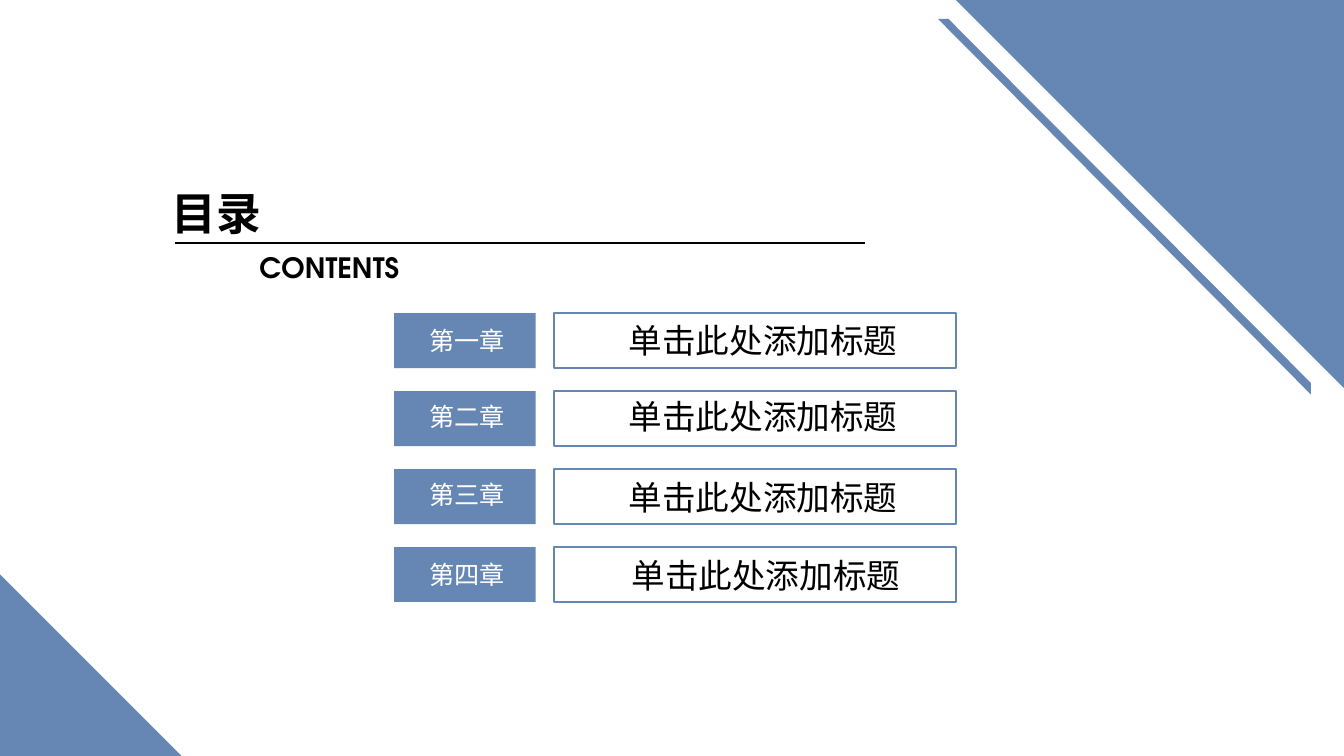
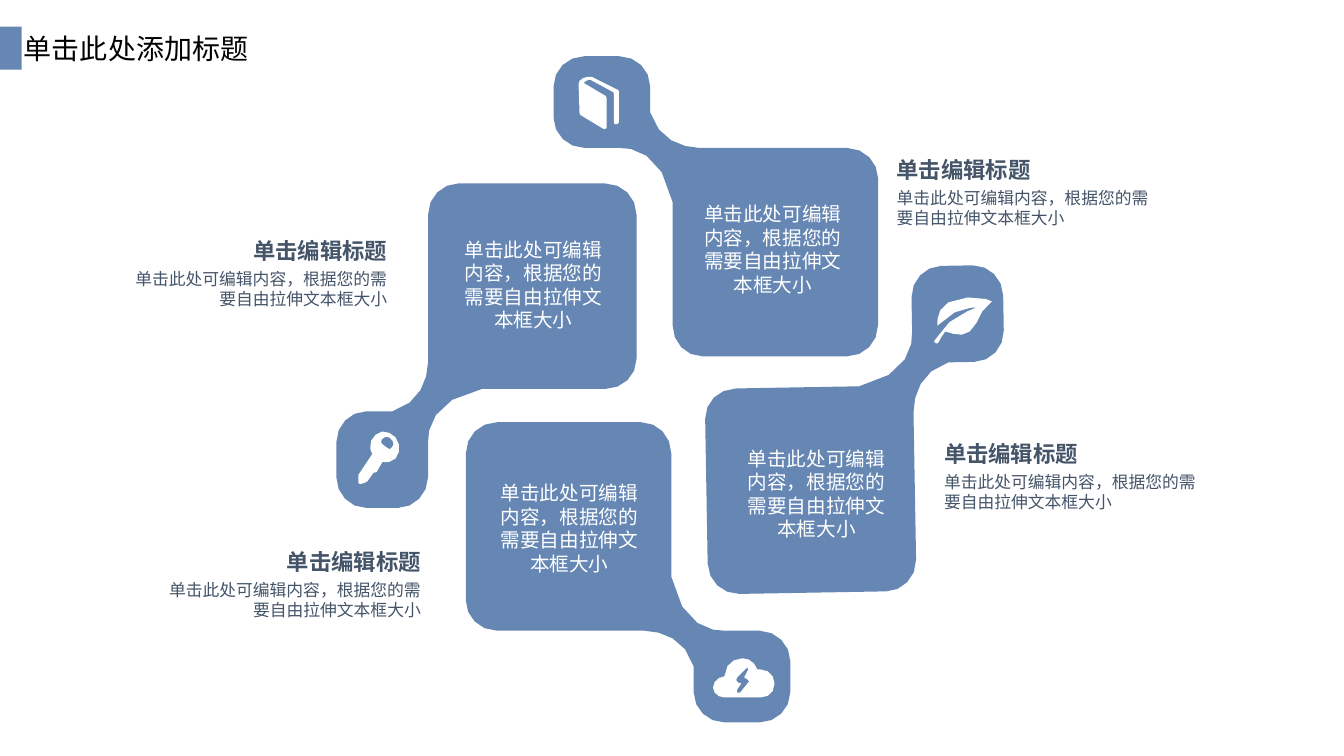
from lxml import etree
from pptx import Presentation
from pptx.dml.color import RGBColor
from pptx.enum.shapes import MSO_CONNECTOR, MSO_SHAPE
from pptx.enum.text import PP_ALIGN
from pptx.oxml.ns import qn
from pptx.util import Pt

RECT = MSO_SHAPE.RECTANGLE
WEDGE = MSO_SHAPE.RIGHT_TRIANGLE
STRAIGHT = MSO_CONNECTOR.STRAIGHT
LEFT, MID, RIGHT = PP_ALIGN.LEFT, PP_ALIGN.CENTER, PP_ALIGN.RIGHT

BLUE, SLATE, WHITE, BLACK = "6687B3", "445469", "FFFFFF", "000000"
HAN, LATIN, SANS = "Noto Sans CJK SC", "TeX Gyre Adventor", "Arial"

TITLE = "单击此处添加标题"
HEAD = "单击编辑标题"
BODY = "单击此处可编辑内容，根据您的需要自由拉伸文本框大小"

STRIPE = [[(670, 13.5), (677.5, 13.5), (936.4, 273.6), (936.4, 281.8)]]

PETAL_W, PETAL_H = 231.8, 214.4
PETAL = [[
    (22, 65.5), (47, 65.5), (55, 65, 78, 68, 85, 104),
    (85, 192), (85, 204.5, 94.5, 214.4, 106.5, 214.4),
    (209.5, 214.4), (222, 214.4, 231.8, 204.5, 231.8, 192),
    (231.8, 87), (231.8, 76, 222.5, 65.5, 209.5, 65.5),
    (104, 65.5), (91.5, 65, 75, 60, 69, 40),
    (69, 21.5), (69, 9.5, 59, 0, 47, 0),
    (22, 0), (10, 0, 0, 9.5, 0, 21.5),
    (0, 44), (0, 55.5, 10, 65.5, 22, 65.5),
]]
BOOK = [[
    (28, 10), (9.4, 0.7), (7.2, 0, 2.2, 1.4, 0.7, 3.6), (0, 5.8),
    (0.7, 26.6), (1.4, 28), (18, 38), (20, 37.5), (20, 15.8),
    (19.4, 14.4), (3.6, 5), (5, 3.5, 7.2, 2.5, 8.6, 2.9),
    (24.5, 11.5), (25.2, 12.2), (25.2, 33),
    (25.2, 34, 26, 34.6, 26.6, 34.6), (27.4, 34.6, 28.8, 34, 28.8, 33),
    (28.8, 10.8),
]]
KEY = [
    [(29, 9.5), (28, 3, 22, 0, 17, 0), (11.5, 1.5, 8, 6, 8.5, 11.5),
     (8.5, 12.5, 9, 14.5, 10, 16), (0, 31), (0, 36),
     (0, 37, 0.5, 37.5, 1.5, 37.5), (4.5, 36.7), (6.5, 35.5),
     (10.8, 29.5), (13, 29), (17.3, 21.6),
     (18.7, 22.3, 21.6, 21.6, 22.3, 21.6),
     (27.4, 21, 30.2, 14.4, 29, 9.5)],
    [(23.8, 11.5), (22.3, 13.7, 21.6, 12.2, 19.4, 10.8),
     (18, 9.4, 15, 8.6, 16.6, 5.8), (18, 3.6, 21.6, 2.9, 23, 5),
     (25.2, 6.5, 26, 10, 23.8, 11.5)],
]
CLOUD = [
    [(31.7, 8), (30, 3, 26, 0, 21, 0), (14.4, 0, 8.6, 5, 8.6, 11.5),
     (8, 13), (4.3, 13, 0, 16.6, 0, 21), (0, 25, 4.3, 28, 8, 28),
     (34, 28), (39.6, 28, 44, 24.5, 44, 18),
     (44, 12.2, 39.6, 8, 34, 8)],
    [(25.2, 17.3), (19.4, 24.5), (17.3, 24.5), (17.3, 22.3),
     (20.2, 18), (18, 17.3), (16.6, 15.8), (17.3, 13.7),
     (23, 8), (24.5, 6.5), (25.2, 8), (22.3, 13.7),
     (24.5, 15), (26, 16.6)],
]
LEAF = [[
    (10.8, 7.2), (2.2, 12.2, 2.9, 20.2, 2.9, 23.8),
    (14.4, 10, 31, 10.8, 31, 10.8), (31, 10.8, 7.2, 18.7, 0.7, 34.6),
    (0, 36, 2.9, 37.4, 3.6, 36), (5, 32.4, 8.6, 28, 8.6, 28),
    (13.7, 29.5, 20.9, 32.4, 26, 28), (32.4, 23.8, 32.4, 12.2, 41.8, 6.5),
    (44.6, 5.8, 22.3, 0, 10.8, 7.2),
]]

ROWS = [
    ("第一章", 229, 442, 225),
    ("第二章", 283, 442, 279.4),
    ("第三章", 339, 442, 337),
    ("第四章", 396, 444, 393),
]
PETALS = [
    ((347.5, 246.9), 270, KEY, (256, 308.2), (326, 169.7), (92.6, 169.7), RIGHT),
    ((448.6, 408.8), 180, CLOUD, (509.3, 470.2), (351.7, 343.6), (116.7, 391.7), RIGHT),
    ((511.3, 147.4), 0, BOOK, (413.3, 54.2), (497, 144.5), (640.5, 111.6), LEFT),
    ((611, 306.9), 89, LEAF, (666.7, 208.8), (528.2, 319), (674.3, 314.6), LEFT),
]


def tint(code):
    return RGBColor.from_string(code)


def trace(path, steps):
    dots = [path[0]]
    for part in path[1:]:
        if len(part) == 2:
            dots.append(part)
            continue
        a, b, c, d = dots[-1], part[:2], part[2:4], part[4:]
        for i in range(1, steps + 1):
            t = i / steps
            u = 1 - t
            dots.append(tuple(
                u**3 * p + 3 * u * u * t * q + 3 * u * t * t * r + t**3 * s
                for p, q, r, s in zip(a, b, c, d)))
    return dots


class Deck:
    def __init__(self):
        self.file = Presentation()
        self.file.slide_width, self.file.slide_height = Pt(960), Pt(540)

    def page(self):
        slide = self.file.slides.add_slide(self.file.slide_layouts[6])
        self.shapes = slide.shapes

    def paint(self, shape, fill, edge=None, turn=0):
        shape.shadow.inherit = False
        shape.rotation = turn
        if fill:
            shape.fill.solid()
            shape.fill.fore_color.rgb = tint(fill)
        else:
            shape.fill.background()
        if edge:
            shape.line.color.rgb = tint(edge)
            shape.line.width = Pt(1.5)
        else:
            shape.line.fill.background()

    def block(self, kind, x, y, w, h, fill=BLUE, edge=None, turn=0):
        shape = self.shapes.add_shape(kind, Pt(x), Pt(y), Pt(w), Pt(h))
        self.paint(shape, fill, edge, turn)

    def draw(self, paths, x=0, y=0, fill=BLUE, turn=0, steps=3):
        pen = None
        for path in paths:
            dots = [(Pt(x + a), Pt(y + b)) for a, b in trace(path, steps)]
            if pen is None:
                pen = self.shapes.build_freeform(*dots[0], scale=1.0)
            else:
                pen.move_to(*dots[0])
            pen.add_line_segments(dots[1:], close=True)
        self.paint(pen.convert_to_shape(), fill, turn=turn)

    def rule(self, x, y, end):
        line = self.shapes.add_connector(STRAIGHT, Pt(x), Pt(y), Pt(end), Pt(y))
        line.line.color.rgb = tint(BLACK)
        line.line.width = Pt(1.5)
        etree.SubElement(line._element.spPr, qn("a:effectLst"))

    def text(self, words, x, y, w, h, size, color=BLACK, font=HAN,
             bold=False, align=LEFT, pad=True):
        box = self.shapes.add_textbox(Pt(x), Pt(y), Pt(w), Pt(h))
        frame = box.text_frame
        frame.word_wrap = True
        if not pad:
            frame.margin_left = frame.margin_right = Pt(0)
            frame.margin_top = frame.margin_bottom = Pt(0)
        frame.text = words
        para = frame.paragraphs[0]
        para.alignment = align
        run = para.runs[0]
        run.font.size = Pt(size)
        run.font.bold = bold
        run.font.color.rgb = tint(color)
        run.font.name = font
        east = etree.SubElement(run._r.get_or_add_rPr(), qn("a:ea"))
        east.set("typeface", font)

    def note(self, words, x, y, w, h, size, color, align, bold=False):
        self.text(words, x, y, w, h, size, color, SANS, bold, align, False)


def contents(deck):
    deck.page()
    deck.block(WEDGE, 682.8, 0, 277.2, 277.2, turn=180)
    deck.draw(STRIPE)
    deck.block(WEDGE, 0, 410.2, 129.8, 129.8)
    deck.text("目录", 115.5, 129, 92, 46, 32, bold=True)
    deck.rule(125, 173.5, 618)
    deck.text("CONTENTS", 178.3, 175.4, 116, 32, 20, font=LATIN, bold=True)
    for i, (name, low, x, y) in enumerate(ROWS):
        top = 223.7 + 55.7 * i
        deck.block(RECT, 281.5, top, 101.2, 39.2)
        deck.block(RECT, 396, top, 287, 39.2, None, BLUE)
        deck.text(name, 299.5, low, 72, 29, 18, WHITE)
        deck.text(TITLE, x, y, 211, 36, 24)


def petals(deck):
    deck.page()
    deck.block(RECT, 0, 19, 15.5, 30.8)
    deck.text(TITLE, 10, 18.7, 184, 32, 20)
    for (cx, cy), turn, icon, spot, card, side, align in PETALS:
        deck.draw(PETAL, cx - PETAL_W / 2, cy - PETAL_H / 2, turn=turn, steps=4)
        deck.draw(icon, *spot, fill=WHITE)
        deck.note(BODY, *card, 110, 68, 14, WHITE, MID)
        x, y = side
        deck.note(HEAD, x, y, 184, 19, 16, SLATE, align, True)
        deck.note(BODY, x, y + 22.3, 184, 29, 12, SLATE, align)


def main():
    deck = Deck()
    contents(deck)
    petals(deck)
    deck.file.save("out.pptx")


if __name__ == "__main__":
    main()
